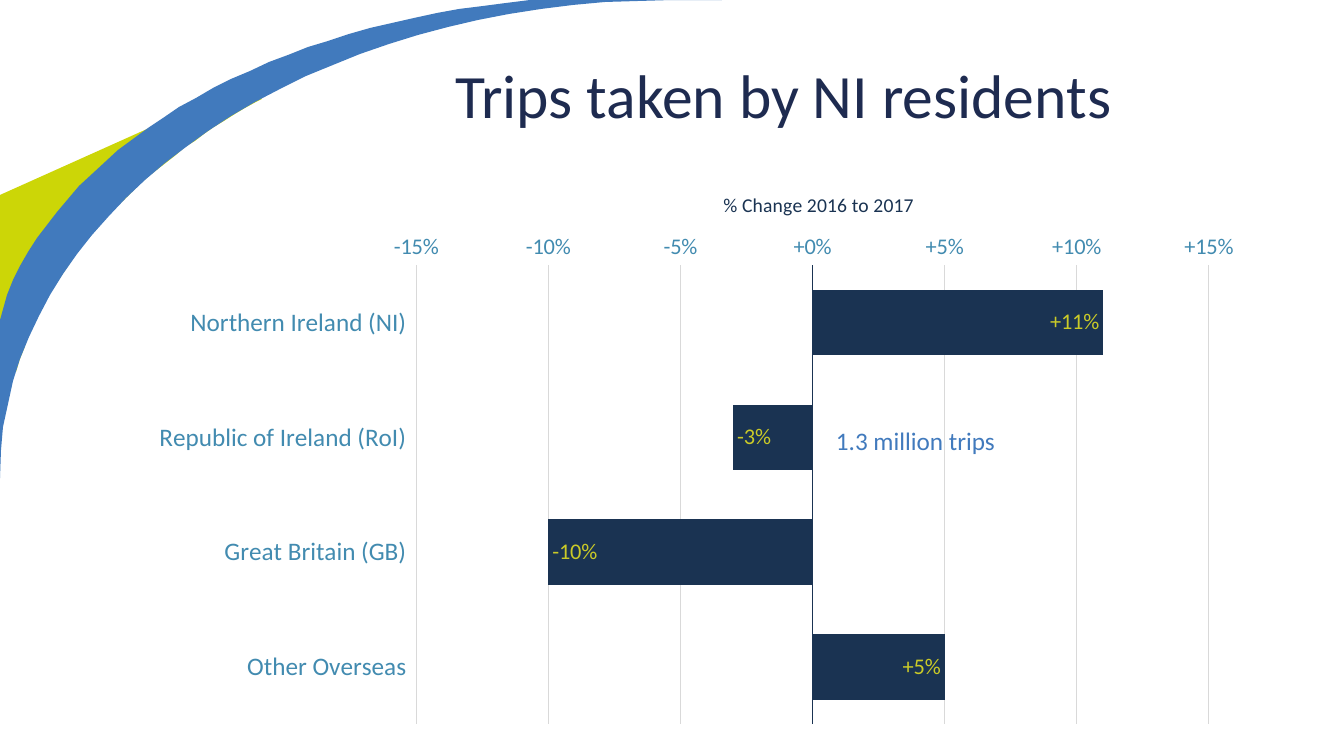
from lxml import etree
from pptx import Presentation
from pptx import util as u
from pptx.chart import data
from pptx.dml.color import RGBColor
from pptx.enum import chart as ch, text
from pptx.oxml import ns

PX = 12192000 / 1344
NAVY, BLUE, TEAL = "1A3352", "417ABD", "428BB0"
SIGNED = r"\+0%;\-0%;0%"


def paint(part, hue):
    if hasattr(part, "solid"):
        part.solid()
        part = part.fore_color
    part.rgb = RGBColor.from_string(hue)


def style(font, size, hue):
    for key, val in {"name": "Calibri", "size": u.Pt(size), "bold": False}.items():
        setattr(font, key, val)
    paint(font.color, hue)


deck = Presentation()
deck.slide_width, deck.slide_height = round(1344 * PX), round(756 * PX)
slide = deck.slides.add_slide(deck.slide_layouts[5])

swoops = [
    ("CCD607", [(254, 81), (262, 99), (256, 102),
                ((141, 166), (56, 255), (20, 359)),
                (16, 372), (0, 335), (0, 195)]),
    (BLUE, [(722, 0), (672, 0),
            ((312, 0), (19, 200), (1, 450)),
            (0, 478), (0, 320), (7, 295),
            ((70, 138), (274, 24), (530, 0))]),
]
for hue, steps in swoops:
    dots = []
    for step in steps:
        if isinstance(step[0], int):
            dots.append(step)
            continue
        ends = [dots[-1], *step]
        for n in range(1, 33):
            t = n / 32
            load = [(1 - t) ** 3, 3 * t * (1 - t) ** 2, 3 * t * t * (1 - t), t ** 3]
            dots.append(tuple(sum(w * p[i] for w, p in zip(load, ends)) for i in (0, 1)))
    pen = slide.shapes.build_freeform(*dots[0], scale=PX)
    pen.add_line_segments(dots[1:], close=True)
    swoop = pen.convert_to_shape()
    swoop.shadow.inherit = False
    paint(swoop.fill, hue)
    swoop.line.fill.background()

title = slide.shapes.title
title.element.getparent().append(title.element)
for key, val in {"left": 316, "top": 33, "width": 935, "height": 132}.items():
    setattr(title, key, round(val * PX))
title.text_frame.text = "Trips taken by NI residents"
title.text_frame.vertical_anchor = text.MSO_ANCHOR.MIDDLE
head = title.text_frame.paragraphs[0]
head.alignment, head.line_spacing = text.PP_ALIGN.CENTER, 0.9
style(head.font, 44, "1E2B50")

trips = data.CategoryChartData()
trips.categories = ["Northern Ireland (NI)", "Republic of Ireland (RoI)",
                    "Great Britain (GB)", "Other Overseas"]
trips.add_series("Series 1", [0.11, -0.03, -0.1, 0.05])
box = [round(n * PX) for n in (148, 182, 1104, 555)]
chart = slide.shapes.add_chart(ch.XL_CHART_TYPE.BAR_CLUSTERED, *box, trips).chart
chart.has_legend = chart.has_title = False
style(chart.font, 10, "000000")

plot = chart.plots[0]
for key, val in {"gap_width": 75, "overlap": -39, "vary_by_categories": False}.items():
    setattr(plot, key, val)
bars = plot.series[0]
bars.invert_if_negative = False
paint(bars.format.fill, NAVY)
tags = bars.data_labels
for key, val in {"show_value": True, "number_format": SIGNED,
                 "number_format_is_linked": False,
                 "position": ch.XL_LABEL_POSITION.INSIDE_END}.items():
    setattr(tags, key, val)
style(tags.font, 16, "CACA28")

cat, scale = chart.category_axis, chart.value_axis
for axis, size in ((cat, 18), (scale, 16)):
    axis.major_tick_mark = axis.minor_tick_mark = ch.XL_TICK_MARK.NONE
    style(axis.tick_labels.font, size, TEAL)
cat.reverse_order = True
cat.tick_label_position = ch.XL_TICK_LABEL_POSITION.LOW
cat.format.line.width = u.Pt(1)
paint(cat.format.line.fill, NAVY)

for key, val in {"minimum_scale": -0.15, "maximum_scale": 0.15,
                 "major_unit": 0.05, "has_major_gridlines": True}.items():
    setattr(scale, key, val)
scale.tick_labels.number_format = SIGNED
scale.tick_labels.number_format_is_linked = False
scale.format.line.fill.background()
grid = scale.major_gridlines.format.line
grid.width = u.Pt(0.75)
paint(grid.fill, "D9D9D9")
name = scale.axis_title
name.text_frame.text = "% Change 2016 to 2017"
style(name.text_frame.paragraphs[0].font, 14, NAVY)

area = chart.element.find(".//" + ns.qn("c:plotArea"))
name_xml = area.find(ns.qn("c:valAx")).find(ns.qn("c:title"))
places = [
    (area, 0, {"layoutTarget": "inner", "xMode": "edge", "yMode": "edge",
               "x": 0.243, "y": 0.15, "w": 0.718, "h": 0.827}),
    (name_xml, 1, {"xMode": "edge", "yMode": "edge", "x": 0.518, "y": 0.01}),
]
for node, spot, vals in places:
    old = node.find(ns.qn("c:layout"))
    if old is not None:
        node.remove(old)
    frame = etree.Element(ns.qn("c:layout"))
    node.insert(spot, frame)
    hand = etree.SubElement(frame, ns.qn("c:manualLayout"))
    for key, val in vals.items():
        etree.SubElement(hand, ns.qn("c:" + key), val=str(val))

note = slide.shapes.add_textbox(*[round(n * PX) for n in (826, 420, 184, 40)])
note.text_frame.word_wrap = True
note.text_frame.auto_size = text.MSO_AUTO_SIZE.SHAPE_TO_FIT_TEXT
note.text_frame.text = "1.3 million trips"
style(note.text_frame.paragraphs[0].font, 18, BLUE)

deck.save("out.pptx")
